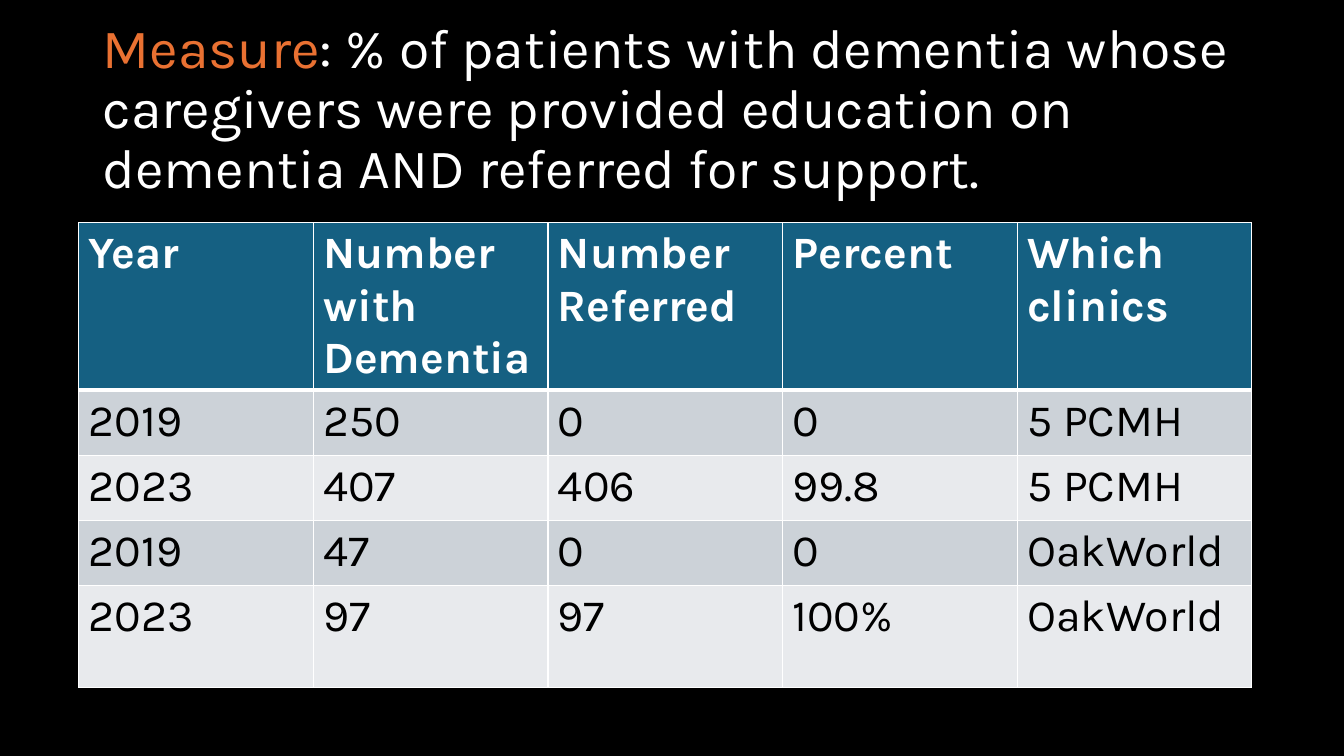
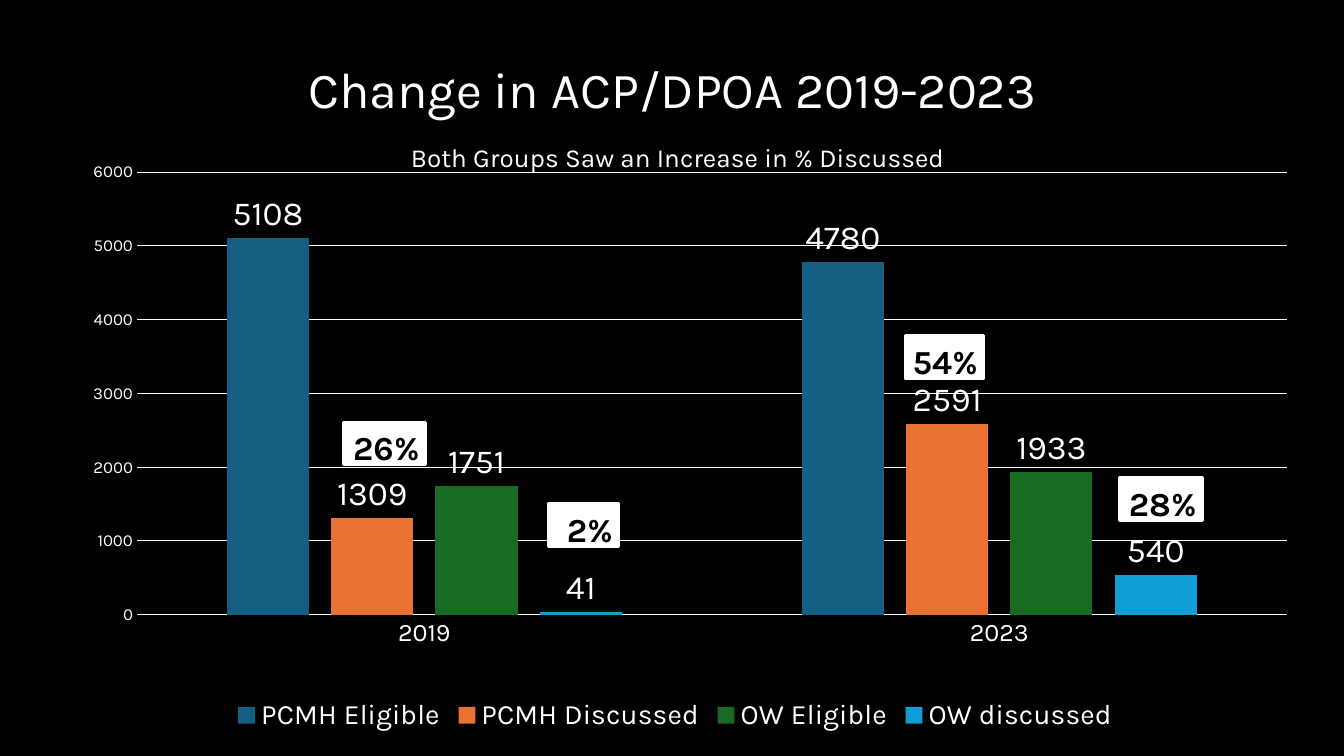
from lxml import etree
from pptx import Presentation
from pptx.chart.data import CategoryChartData as ChartData
from pptx.dml.color import RGBColor as Color
from pptx.enum.chart import XL_CHART_TYPE as ChartType
from pptx.enum.chart import XL_LABEL_POSITION as LabelPosition
from pptx.enum.chart import XL_LEGEND_POSITION as LegendPosition
from pptx.enum.chart import XL_TICK_MARK as TickMark
from pptx.enum.text import MSO_ANCHOR as Anchor
from pptx.enum.text import PP_ALIGN as Align
from pptx.oxml.ns import qn
from pptx.util import Inches, Pt

# Shared style
FONT = "Karla"
COLORS = {
    "black": "000000", "white": "FFFFFF", "blue": "156082",
    "orange": "E97132", "green": "196B24", "sky": "0F9ED5",
    "band_dark": "CCD2D8", "band_light": "E8EAED",
}
SLIDE_WIDTH, SLIDE_HEIGHT = Inches(13.33), Inches(7.5)
TITLE_LEFT, TITLE_WIDTH = 6.9, 86.25

# Table content
HEADER = ["Year", "Number with Dementia", "Number Referred", "Percent",
          "Which clinics"]
RECORDS = [
    ["2019", "250", "0", "0", "5 PCMH"],
    ["2023", "407", "406", "99.8", "5 PCMH"],
    ["2019", "47", "0", "0", "OakWorld"],
    ["2023", "97", "97", "100%", "OakWorld"],
]
ROW_SHARES = [21.6, 8.6, 8.6, 8.6, 13.5]

# Chart content
YEARS = ["2019", "2023"]
SERIES = [
    ("PCMH Eligible", (5108, 4780), "blue"),
    ("PCMH Discussed", (1309, 2591), "orange"),
    ("OW Eligible", (1751, 1933), "green"),
    ("OW discussed", (41, 540), "sky"),
]
BADGES = [  # text, left, top, width
    ("26%", 25.58, 55.87, 6.08),
    ("2%", 40.8, 66.67, 5.25),
    ("54%", 67.35, 44.4, 5.85),
    ("28%", 83.33, 63.2, 6.15),
]


def across(percent):
    return round(SLIDE_WIDTH * percent / 100)


def down(percent):
    return round(SLIDE_HEIGHT * percent / 100)


def area(left, top, width, height):
    """Turn shares of the slide, in percent, into a position and size."""
    return across(left), down(top), across(width), down(height)


def rgb(name):
    return Color.from_string(COLORS[name])


def style_font(font, size, color="white", bold=False):
    font.name = FONT
    font.size = Pt(size)
    font.bold = bold
    font.color.rgb = rgb(color)


def add_slide(presentation):
    slide = presentation.slides.add_slide(presentation.slide_layouts[6])
    slide.background.fill.solid()
    slide.background.fill.fore_color.rgb = rgb("black")
    return slide


def add_title(slide, top, height, size, parts, align=Align.LEFT):
    """Add a title made of (text, colour) parts."""
    shape = slide.shapes.add_textbox(*area(TITLE_LEFT, top, TITLE_WIDTH, height))
    frame = shape.text_frame
    frame.word_wrap = True
    frame.vertical_anchor = Anchor.MIDDLE
    paragraph = frame.paragraphs[0]
    paragraph.alignment = align
    paragraph.line_spacing = 0.9
    for text, color in parts:
        run = paragraph.add_run()
        run.text = text
        style_font(run.font, size, color)


def set_borders(cell, bottom_width):
    properties = cell._tc.get_or_add_tcPr()
    for side, width in (("L", 1), ("R", 1), ("T", 1), ("B", bottom_width)):
        line = etree.SubElement(properties, qn(f"a:ln{side}"), w=str(Pt(width)))
        fill = etree.SubElement(line, qn("a:solidFill"))
        etree.SubElement(fill, qn("a:srgbClr"), val=COLORS["white"])


def add_results_table(slide):
    rows = [HEADER] + RECORDS
    table = slide.shapes.add_table(
        len(rows), len(HEADER), *area(5.85, 29.47, 87.3, sum(ROW_SHARES))).table
    for row, share in zip(table.rows, ROW_SHARES):
        row.height = down(share)
    for row_index, values in enumerate(rows):
        is_header = row_index == 0
        band = "band_dark" if row_index % 2 else "band_light"
        for column_index, value in enumerate(values):
            cell = table.cell(row_index, column_index)
            cell.text_frame.text = value
            style_font(cell.text_frame.paragraphs[0].runs[0].font, 32,
                       "white" if is_header else "black", is_header)
            set_borders(cell, 3 if is_header else 1)
            cell.fill.solid()
            cell.fill.fore_color.rgb = rgb("blue" if is_header else band)


def place_manually(parent, index, **shares):
    """Give a chart part a fixed place, as shares of the chart's size."""
    for old_layout in parent.findall(qn("c:layout")):
        parent.remove(old_layout)
    layout = etree.Element(qn("c:layout"))
    manual = etree.SubElement(layout, qn("c:manualLayout"))
    if "w" in shares:
        etree.SubElement(manual, qn("c:layoutTarget"), val="inner")
    for mode in ("xMode", "yMode"):
        etree.SubElement(manual, qn(f"c:{mode}"), val="edge")
    for key, share in shares.items():
        etree.SubElement(manual, qn(f"c:{key}"), val=str(share))
    parent.insert(index, layout)


def style_axes(chart):
    for axis, size in ((chart.category_axis, 18), (chart.value_axis, 12)):
        axis.major_tick_mark = axis.minor_tick_mark = TickMark.NONE
        style_font(axis.tick_labels.font, size)
    values = chart.value_axis
    values.minimum_scale, values.maximum_scale = 0, 6000
    values.major_unit = 1000
    values.format.line.fill.background()
    for line in (chart.category_axis.format.line,
                 values.major_gridlines.format.line):
        line.color.rgb = rgb("white")
        line.width = Pt(0.75)


def add_column_chart(slide, title):
    data = ChartData()
    data.categories = YEARS
    for name, values, _ in SERIES:
        data.add_series(name, values)
    chart = slide.shapes.add_chart(
        ChartType.COLUMN_CLUSTERED, *area(4.73, 16.27, 91.05, 81.33), data).chart
    style_font(chart.font, 10)

    # Title and legend
    chart.has_title = True
    chart.chart_title.text_frame.text = title
    style_font(chart.chart_title.text_frame.paragraphs[0].runs[0].font, 18.6)
    place_manually(chart.chart_title._element, 1, x=0.28, y=0.02)
    chart.has_legend = True
    chart.legend.position = LegendPosition.BOTTOM
    chart.legend.include_in_layout = False
    style_font(chart.legend.font, 20)

    # Columns and their labels
    style_axes(chart)
    plot = chart.plots[0]
    plot.vary_by_categories = False
    plot.gap_width, plot.overlap = 219, -27
    for series, (_, _, color) in zip(plot.series, SERIES):
        series.format.fill.solid()
        series.format.fill.fore_color.rgb = rgb(color)
        labels = series.data_labels
        labels.show_value = True
        labels.position = LabelPosition.OUTSIDE_END
        style_font(labels.font, 24)
    plot_area = chart._chartSpace.chart.plotArea
    place_manually(plot_area, 0, x=0.06, y=0.08, w=0.94, h=0.72)


def add_badge(slide, text, left, top, width):
    shape = slide.shapes.add_textbox(*area(left, top, width, 5.6))
    shape.fill.solid()
    shape.fill.fore_color.rgb = rgb("white")
    shape.line.color.rgb = rgb("white")
    shape.line.width = Pt(2.25)
    frame = shape.text_frame
    frame.word_wrap = False
    # Narrow side margins keep the percentage on one line
    frame.margin_left, frame.margin_right = 0, Inches(0.06)
    frame.text = text
    paragraph = frame.paragraphs[0]
    paragraph.alignment = Align.RIGHT
    style_font(paragraph.runs[0].font, 24, "black", True)


def main():
    presentation = Presentation()
    presentation.slide_width = SLIDE_WIDTH
    presentation.slide_height = SLIDE_HEIGHT

    # Measure and results
    slide = add_slide(presentation)
    add_results_table(slide)
    add_title(slide, 4.93, 19.33, 39.6, [
        ("Measure", "orange"),
        (": % of patients with dementia whose caregivers were provided "
         "education on dementia AND referred for support.", "white")])

    # Change between the two years
    slide = add_slide(presentation)
    add_title(slide, 5.33, 13.73, 36,
              [("Change in ACP/DPOA 2019-2023", "white")], Align.CENTER)
    add_column_chart(slide, "Both Groups Saw an Increase in % Discussed")
    for badge in BADGES:
        add_badge(slide, *badge)

    presentation.save("out.pptx")


if __name__ == "__main__":
    main()
